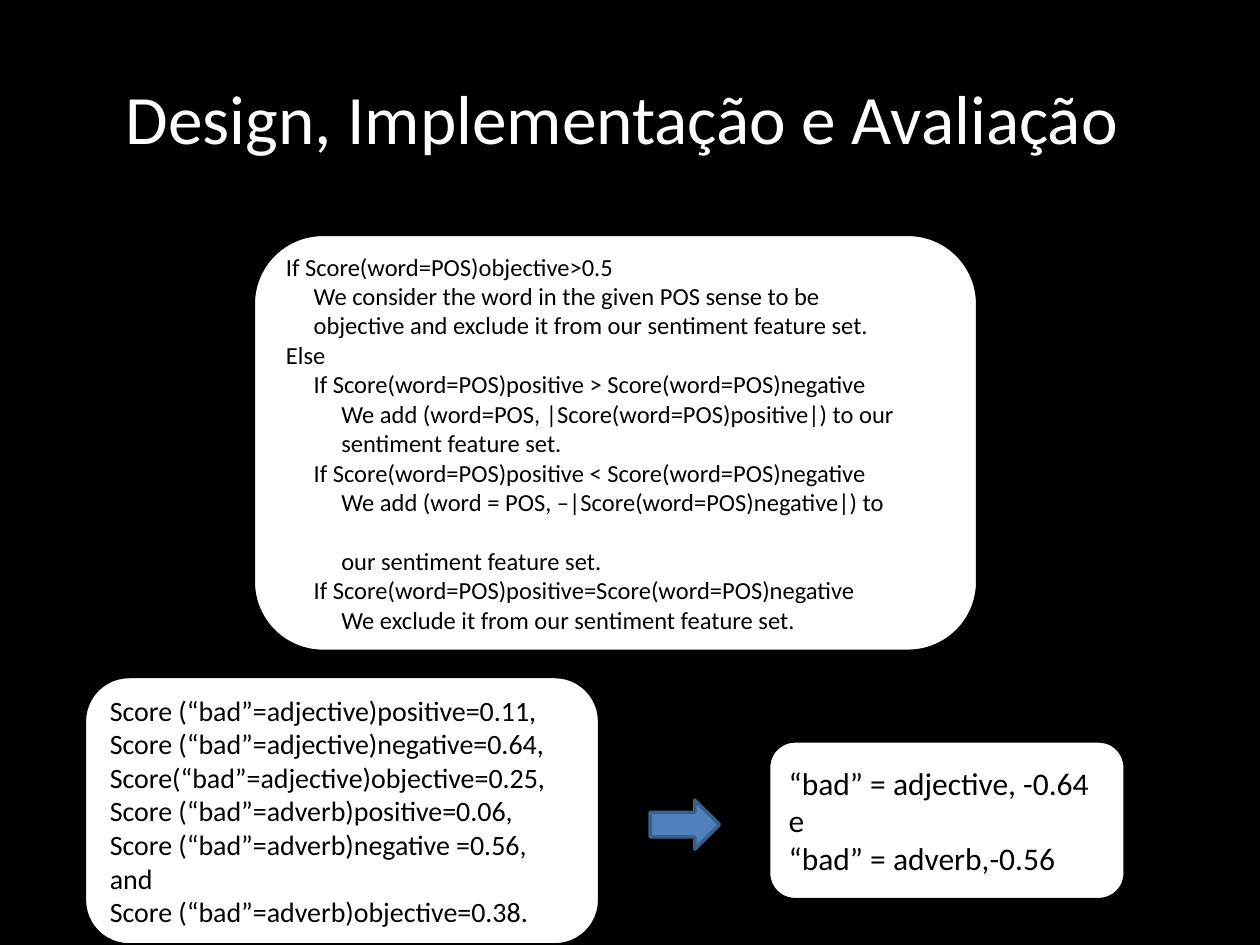
import pptx
import pptx.util
import pptx.dml.color
import pptx.enum.shapes
import pptx.enum.text

Pt = pptx.util.Pt
RGB = pptx.dml.color.RGBColor
Shape = pptx.enum.shapes.MSO_SHAPE
Align = pptx.enum.text.PP_ALIGN
Anchor = pptx.enum.text.MSO_ANCHOR

BLACK = RGB(0x00, 0x00, 0x00)
WHITE = RGB(0xFF, 0xFF, 0xFF)
BLUE = RGB(0x4F, 0x81, 0xBD)
NAVY = RGB(0x3A, 0x5F, 0x8C)

RULES = [
    (0, "If Score(word=POS)objective>0.5"),
    (1, "We consider the word in the given POS sense to be"),
    (1, "objective and exclude it from our sentiment feature set."),
    (0, "Else"),
    (1, "If Score(word=POS)positive > Score(word=POS)negative"),
    (2, "We add (word=POS, |Score(word=POS)positive|) to our"),
    (2, "sentiment feature set."),
    (1, "If Score(word=POS)positive < Score(word=POS)negative"),
    (2, "We add (word = POS, –|Score(word=POS)negative|) to"),
    (2, "our sentiment feature set."),
    (1, "If Score(word=POS)positive=Score(word=POS)negative"),
    (2, "We exclude it from our sentiment feature set."),
]
SCORES = [
    "Score (“bad”=adjective)positive=0.11,",
    "Score (“bad”=adjective)negative=0.64,",
    "Score(“bad”=adjective)objective=0.25,",
    "Score (“bad”=adverb)positive=0.06,",
    "Score (“bad”=adverb)negative =0.56, and",
    "Score (“bad”=adverb)objective=0.38.",
]
RESULT = ["“bad” = adjective, -0.64", "e", "“bad” = adverb,-0.56"]


class Deck:
    """Slide builder with one font, a line width and an indent step."""

    font = "Calibri"
    edge = 2
    step = 15.8

    def __init__(self, slide):
        self.slide = slide

    def label(self, frame, rows, size, color, align):
        frame.word_wrap = True
        frame.vertical_anchor = Anchor.MIDDLE
        paras = []
        for i, (level, text) in enumerate(rows):
            para = frame.add_paragraph() if i else frame.paragraphs[0]
            para.text = text
            para.alignment = align
            if level:
                para._p.get_or_add_pPr().set("marL", str(Pt(level * self.step)))
            para.font.name = self.font
            para.font.size = Pt(size)
            para.font.color.rgb = color
            paras.append(para)
        return paras

    def title(self, text, box, size, inset):
        frame = self.slide.shapes.add_textbox(*map(Pt, box)).text_frame
        frame.margin_right = Pt(inset)
        self.label(frame, [(0, text)], size, WHITE, Align.CENTER)

    def shape(self, kind, box, fill, line):
        shape = self.slide.shapes.add_shape(kind, *map(Pt, box))
        shape.shadow.inherit = False
        shape.fill.solid()
        shape.fill.fore_color.rgb = fill
        shape.line.color.rgb = line
        shape.line.width = Pt(self.edge)
        return shape

    def card(self, rows, box, size):
        card = self.shape(Shape.ROUNDED_RECTANGLE, box, WHITE, BLACK)
        return self.label(card.text_frame, rows, size, BLACK, Align.LEFT)

    def arrow(self, box):
        self.shape(Shape.RIGHT_ARROW, box, BLUE, NAVY)


def main():
    show = pptx.Presentation()
    show.slide_width, show.slide_height = Pt(720), Pt(540)
    slide = show.slides.add_slide(show.slide_layouts[6])
    slide.background.fill.solid()
    slide.background.fill.fore_color.rgb = BLACK

    deck = Deck(slide)
    deck.title("Design, Implementação e Avaliação", (36, 21.6, 648, 90), 39.6, 16.2)
    deck.card([(0, text) for text in SCORES], (48.2, 386.6, 294.5, 153.4), 16)
    lines = deck.card(RULES, (144.7, 133.9, 414, 238.3), 14)
    lines[8].space_after = Pt(16.8)
    deck.arrow((371.5, 457.2, 39.6, 28.1))
    deck.card([(0, text) for text in RESULT], (439.2, 423.4, 203.8, 90.7), 18)
    show.save("out.pptx")


if __name__ == "__main__":
    main()
